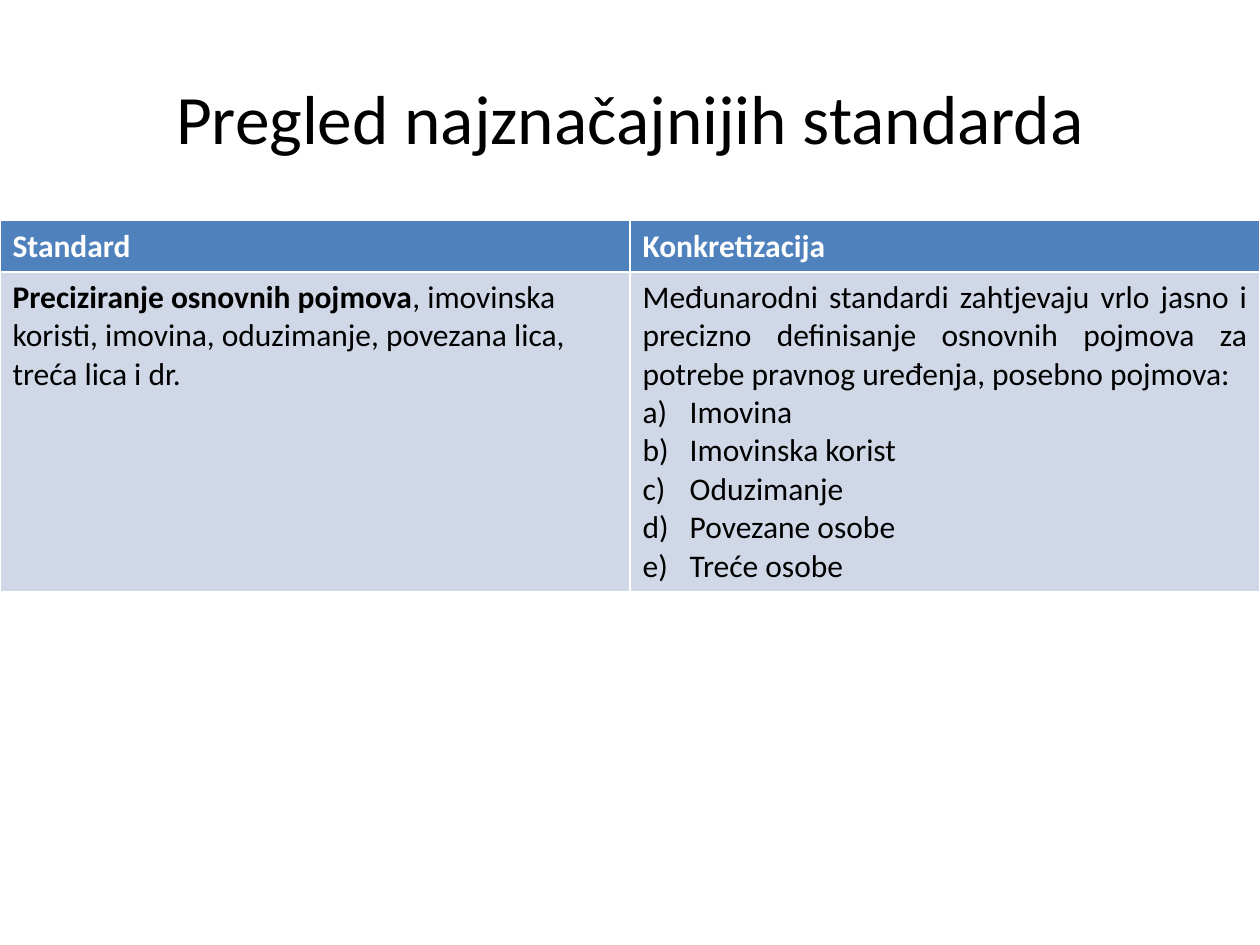
"""Build a slide with a title and a two-column table of standards."""
from dataclasses import dataclass

from lxml.etree import SubElement
from pptx import Presentation
from pptx.dml.color import RGBColor
from pptx.enum.text import MSO_ANCHOR, PP_ALIGN
from pptx.oxml.ns import qn
from pptx.table import _Cell
from pptx.text.text import _Paragraph, _Run
from pptx.util import Cm, Pt

FONT = "Calibri"
COLORS = {"head": "4F81BD", "body": "D0D8E8", "light": "FFFFFF", "dark": "000000"}


@dataclass
class Line:
    text: str
    lead: str = ""
    bold: bool = False
    item: bool = False
    align: PP_ALIGN = PP_ALIGN.LEFT


@dataclass
class Box:
    lines: list[Line]
    fill: str = "body"
    ink: str = "dark"


def style(run: _Run, size: float, ink: str, bold: bool = False) -> None:
    font = run.font
    font.name, font.size, font.bold = FONT, Pt(size), bold
    font.color.rgb = RGBColor.from_string(COLORS[ink])


def letter(para: _Paragraph) -> None:
    props = para._p.get_or_add_pPr()
    props.set("marL", str(Cm(0.95)))
    props.set("indent", str(-Cm(0.95)))
    SubElement(props, qn("a:buFont"), typeface="+mj-lt")
    SubElement(props, qn("a:buAutoNum"), type="alphaLcParenR")


def write(cell: _Cell, box: Box) -> None:
    cell.fill.solid()
    cell.fill.fore_color.rgb = RGBColor.from_string(COLORS[box.fill])
    frame = cell.text_frame
    frame.text = "\n".join(line.lead for line in box.lines)
    for para, line in zip(frame.paragraphs, box.lines):
        para.alignment = line.align
        for run in para.runs:
            style(run, 18, box.ink, True)
        run = para.add_run()
        run.text = line.text
        style(run, 18, box.ink, line.bold)
        if line.item:
            letter(para)


def main() -> None:
    deck = Presentation()
    deck.slide_width, deck.slide_height = Cm(25.4), Cm(19.05)
    slide = deck.slides.add_slide(deck.slide_layouts[5])

    title = slide.shapes.title
    title.left, title.top, title.width, title.height = Cm(1.27), Cm(0.76), Cm(22.86), Cm(3.18)
    frame = title.text_frame
    frame.text = "Pregled najznačajnijih standarda"
    frame.vertical_anchor = MSO_ANCHOR.MIDDLE
    frame.paragraphs[0].alignment = PP_ALIGN.CENTER
    style(frame.paragraphs[0].runs[0], 39.6, "dark")

    terms = ["Imovina", "Imovinska korist", "Oduzimanje", "Povezane osobe", "Treće osobe"]
    intro = Line(
        "Međunarodni standardi zahtjevaju vrlo jasno i precizno definisanje osnovnih "
        "pojmova za potrebe pravnog uređenja, posebno pojmova:",
        align=PP_ALIGN.JUSTIFY,
    )
    topic = Line(
        ", imovinska koristi, imovina, oduzimanje, povezana lica, treća lica i dr.",
        lead="Preciziranje osnovnih pojmova",
    )
    items = [Line(term, item=True, align=PP_ALIGN.JUSTIFY) for term in terms]
    heads = [Box([Line(name, bold=True)], "head", "light") for name in ("Standard", "Konkretizacija")]
    grid = [heads, [Box([topic]), Box([intro, *items])]]

    table = slide.shapes.add_table(2, 2, Cm(0), Cm(4.45), Cm(25.4), Cm(7.4)).table
    for row, boxes, height in zip(table.rows, grid, (1.03, 6.37)):
        row.height = Cm(height)
        for cell, box in zip(row.cells, boxes):
            write(cell, box)

    deck.save("out.pptx")


if __name__ == "__main__":
    main()
